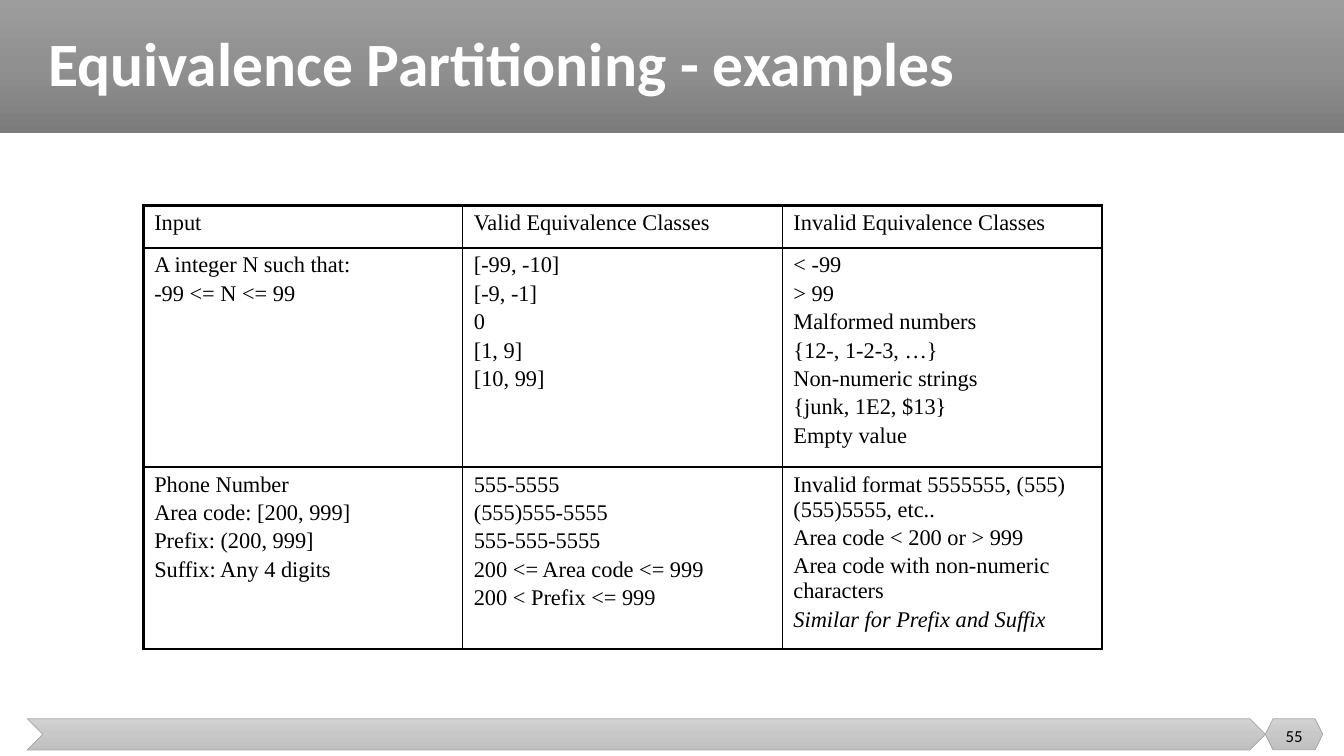
from copy import deepcopy

from lxml import etree
from pptx import Presentation
from pptx.dml.color import RGBColor
from pptx.enum.shapes import MSO_SHAPE
from pptx.enum.text import MSO_ANCHOR, PP_ALIGN
from pptx.oxml.ns import qn
from pptx.util import Inches, Pt

RECT, CHEVRON, HEXAGON = MSO_SHAPE.RECTANGLE, MSO_SHAPE.CHEVRON, MSO_SHAPE.HEXAGON
MIDDLE, LEFT, CENTER = MSO_ANCHOR.MIDDLE, PP_ALIGN.LEFT, PP_ALIGN.CENTER

COLORS = {"black": "000000", "white": "FFFFFF", "edge": "A5A5A5"}
BANNER = ["9D9D9D", "909090", "7C7C7C"]
FOOTER = ["D2D2D2", "C8C8C8", "C0C0C0"]
SANS, SERIF = "Calibri", "Times New Roman"
THIN, THICK = 1, 2.25

WIDTHS = [3.17, 3.17, 3.17]
HEIGHTS = [0.42, 2.09, 1.72]
ITALIC = "Similar for Prefix and Suffix"
ROWS = [
    [["Input"], ["Valid Equivalence Classes"], ["Invalid Equivalence Classes"]],
    [
        ["A integer N such that:", "-99 <= N <= 99"],
        ["[-99, -10]", "[-9, -1]", "0", "[1, 9]", "[10, 99]"],
        ["< -99", "> 99", "Malformed numbers", "{12-, 1-2-3, …}",
         "Non-numeric strings", "{junk, 1E2, $13}", "Empty value"],
    ],
    [
        ["Phone Number", "Area code: [200, 999]", "Prefix: (200, 999]",
         "Suffix: Any 4 digits"],
        ["555-5555", "(555)555-5555", "555-555-5555",
         "200 <= Area code <= 999", "200 < Prefix <= 999"],
        ["Invalid format 5555555, (555)(555)5555, etc..",
         "Area code < 200 or > 999",
         "Area code with non-numeric characters", ITALIC],
    ],
]


def write(frame, lines, size=16, font=SERIF, color="black", bold=False,
          align=LEFT, before=0, spacing=1.0):
    for i, line in enumerate(lines):
        para = frame.add_paragraph() if i else frame.paragraphs[0]
        para.alignment = align
        para.space_before = Pt(before)
        para.line_spacing = spacing
        run = para.add_run()
        run.text = line
        run.font.size = Pt(size)
        run.font.name = font
        run.font.bold = bold
        run.font.italic = line == ITALIC
        run.font.color.rgb = RGBColor.from_string(COLORS[color])


class Deck:
    def __init__(self):
        self.prs = Presentation()
        self.prs.slide_width = Inches(13.33)
        self.prs.slide_height = Inches(7.5)
        self.slide = self.prs.slides.add_slide(self.prs.slide_layouts[6])

    def shape(self, kind, box, shades, edge=None):
        shape = self.slide.shapes.add_shape(kind, *map(Inches, box))
        shape.shadow.inherit = False
        shape.fill.gradient()
        shape.fill.gradient_angle = 270
        stops = shape._element.spPr.find(".//" + qn("a:gsLst"))
        stops.insert(1, deepcopy(stops[0]))
        for i, stop in enumerate(shape.fill.gradient_stops):
            stop.position = i / 2
            stop.color.rgb = RGBColor.from_string(shades[i])
        if edge:
            shape.line.color.rgb = RGBColor.from_string(COLORS[edge])
            shape.line.width = Pt(0.5)
        else:
            shape.line.fill.background()

    def text(self, box, line, **style):
        frame = self.slide.shapes.add_textbox(*map(Inches, box)).text_frame
        frame.word_wrap = True
        frame.vertical_anchor = MIDDLE
        write(frame, [line], **style)

    def border(self, cell, side, width):
        props = cell._tc.get_or_add_tcPr()
        line = etree.SubElement(props, qn("a:" + side), w=str(Pt(width)))
        fill = etree.SubElement(line, qn("a:solidFill"))
        etree.SubElement(fill, qn("a:srgbClr"), val=COLORS["black"])

    def table(self, left, top, rows, widths, heights):
        box = map(Inches, (left, top, sum(widths), sum(heights)))
        table = self.slide.shapes.add_table(len(rows), len(widths), *box).table
        table.first_row = table.horz_banding = False
        for col, width in zip(table.columns, widths):
            col.width = Inches(width)
        for row, height in zip(table.rows, heights):
            row.height = Inches(height)
        for r, row in enumerate(rows):
            for c, lines in enumerate(row):
                cell = table.cell(r, c)
                cell.margin_left = cell.margin_right = Inches(0.11)
                cell.margin_top = cell.margin_bottom = Inches(0.05)
                outer = {"lnL": c == 0, "lnR": c == len(widths) - 1,
                         "lnT": r == 0, "lnB": r == len(rows) - 1}
                for side, edge in outer.items():
                    self.border(cell, side, THICK if edge else THIN)
                cell.fill.background()
                write(cell.text_frame, lines, before=2.5)


def main():
    deck = Deck()
    deck.shape(RECT, (0, 0, 13.33, 1.32), BANNER)
    deck.shape(CHEVRON, (0.27, 7.13, 12.28, 0.31), FOOTER, edge="edge")
    deck.shape(HEXAGON, (12.55, 7.13, 0.57, 0.31), FOOTER, edge="edge")
    deck.text((0.38, 0, 12.74, 1.32), "Equivalence Partitioning - examples",
              size=44, font=SANS, color="white", bold=True, spacing=0.9)
    deck.table(1.42, 2.04, ROWS, WIDTHS, HEIGHTS)
    deck.text((12.55, 7.1, 0.57, 0.4), "55", size=12, font=SANS, align=CENTER)
    deck.prs.save("out.pptx")


if __name__ == "__main__":
    main()
